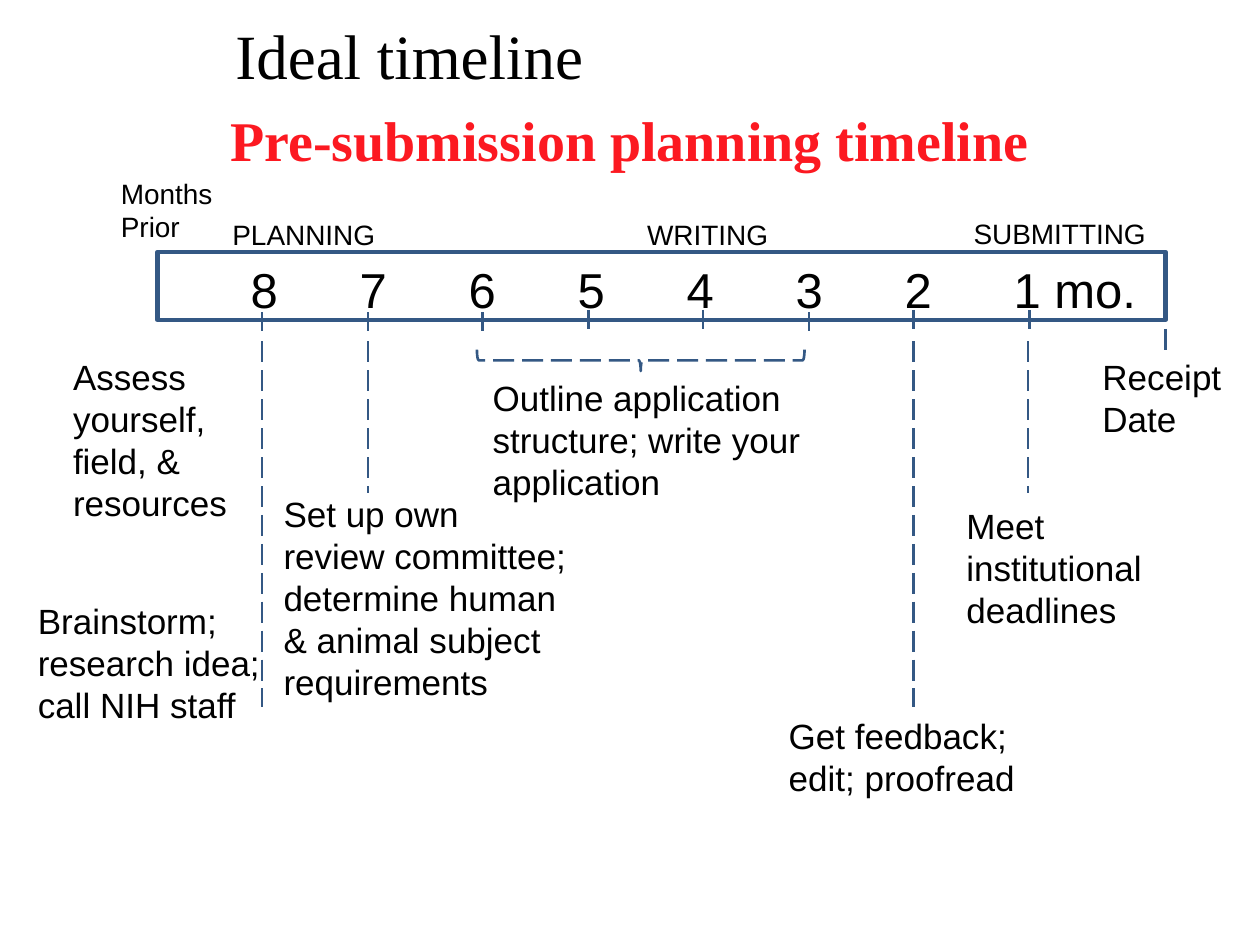
from pptx import Presentation
from pptx.dml.color import RGBColor
from pptx.enum.dml import MSO_LINE
from pptx.enum.shapes import MSO_CONNECTOR, MSO_SHAPE
from pptx.enum.text import MSO_ANCHOR, MSO_AUTO_SIZE, PP_ALIGN
from pptx.oxml.ns import qn
from pptx.util import Inches, Pt
from lxml import etree

STRAIGHT = MSO_CONNECTOR.STRAIGHT
RECTANGLE, BRACE = MSO_SHAPE.RECTANGLE, MSO_SHAPE.RIGHT_BRACE
LONG_DASH = MSO_LINE.LONG_DASH
TOP, BOTTOM = MSO_ANCHOR.TOP, MSO_ANCHOR.BOTTOM
LEFT, CENTER = PP_ALIGN.LEFT, PP_ALIGN.CENTER
NO_FIT = MSO_AUTO_SIZE.NONE

SANS, SERIF = "Arial", "Times New Roman"
BLUE, RED, BLACK = "345884", "FC1921", "000000"


def rgb(color):
    return RGBColor.from_string(color)


class TimelineSlide:
    """Holds the current slide and the style of its elements."""

    def __init__(self, prs):
        self.s = prs.slides.add_slide(prs.slide_layouts[5])

    def set_font(self, p, size, name=SANS, color=BLACK, bold=False):
        p.font.size, p.font.name, p.font.bold = Pt(size), name, bold
        p.font.color.rgb = rgb(color)

    def set_margins(self, tf, left=0, top=0, right=0, bottom=0):
        tf.margin_left, tf.margin_top = Inches(left), Inches(top)
        tf.margin_right, tf.margin_bottom = Inches(right), Inches(bottom)

    def style_line(self, shape, width=1.5, dash=None):
        shape.line.color.rgb = rgb(BLUE)
        shape.line.width = Pt(width)
        if dash:
            shape.line.dash_style = dash

    def title(self, text, box):
        sp = self.s.shapes.title
        sp.left, sp.top, sp.width, sp.height = map(Inches, box)
        tf = sp.text_frame
        tf.text = text
        tf.auto_size, tf.vertical_anchor = NO_FIT, TOP
        self.set_margins(tf, 0.1, 0.09, 0.1, 0.05)
        tf.paragraphs[0].alignment = CENTER
        self.set_font(tf.paragraphs[0], 32, SERIF, RED, True)

    def heading(self, text, box):
        tf = self.s.shapes.add_textbox(*map(Inches, box)).text_frame
        tf.word_wrap = False
        tf.text = text
        self.set_font(tf.paragraphs[0], 36, SERIF)

    def text(self, text, box, size=20, align=LEFT, right=0):
        tf = self.s.shapes.add_textbox(*map(Inches, box)).text_frame
        tf.word_wrap = True
        self.set_margins(tf, right=right)
        tf.text = text
        for p in tf.paragraphs:
            p.alignment = align
            self.set_font(p, size)

    def outline(self, kind, box, width=1.5, dash=None):
        sp = self.s.shapes.add_shape(kind, *map(Inches, box))
        sp.shadow.inherit = False
        sp.fill.background()
        self.style_line(sp, width, dash)
        return sp

    def month_bar(self, months, box, first, step):
        """Draw the bar with its months on evenly spaced tab stops."""
        tf = self.outline(RECTANGLE, box, 2.5).text_frame
        tf.vertical_anchor = BOTTOM
        self.set_margins(tf, bottom=0.01)
        p = tf.paragraphs[0]
        p.text = "".join("\t" + month for month in months)
        p.alignment = LEFT
        tabs = etree.SubElement(p._p.get_or_add_pPr(), qn("a:tabLst"))
        for i in range(len(months)):
            position = Inches(first + i * step)
            etree.SubElement(tabs, qn("a:tab"), pos=str(position), algn="l")
        self.set_font(p, 28)

    def vertical(self, x, top, bottom, dash=None):
        line = self.s.shapes.add_connector(
            STRAIGHT, Inches(x), Inches(top), Inches(x), Inches(bottom))
        self.style_line(line, dash=dash)
        etree.SubElement(line._element.spPr, qn("a:effectLst"))


def main():
    prs = Presentation()
    prs.slide_width, prs.slide_height = Inches(10), Inches(7.5)
    slide = TimelineSlide(prs)

    slide.heading("Ideal timeline", (1.77, 0.08, 2.99, 0.71))
    slide.title("Pre-submission planning timeline", (0, 0.75, 10, 0.9))

    slide.text("Months Prior", (0.96, 1.4, 0.83, 0.54), 16, right=0.1)
    for phase, left, top, width in (
        ("PLANNING", 1.25, 1.73, 2.42),
        ("WRITING", 3.67, 1.73, 3.99),
        ("SUBMITTING", 7.67, 1.72, 1.58),
    ):
        slide.text(phase, (left, top, width, 0.27), 16, CENTER, 0.1)

    months = ["8", "7", "6", "5", "4", "3", "2", "1 mo."]
    slide.month_bar(months, (1.25, 2, 8, 0.54), 0.74, 0.865)
    for x, top in ((2.08, 2.48), (2.92, 2.48), (3.83, 2.48), (4.67, 2.46),
                   (5.58, 2.46), (6.42, 2.48), (7.25, 2.46), (8.17, 2.46)):
        slide.vertical(x, top, top + 0.15)

    for x, top, bottom in ((2.08, 2.71, 5.61), (2.92, 2.71, 3.91),
                           (7.25, 2.71, 5.61), (8.16, 2.71, 3.91),
                           (9.25, 2.61, 2.81)):
        slide.vertical(x, top, bottom, LONG_DASH)
    brace = slide.outline(BRACE, (5, 1.56, 0.17, 2.6), dash=LONG_DASH)
    brace.rotation = 90

    for task, box in (
        ("Assess\nyourself, field, & resources", (0.58, 2.82, 1.33, 1.35)),
        ("Brainstorm; research idea; call NIH staff",
         (0.3, 4.76, 1.83, 1.01)),
        ("Set up own review committee; determine human & animal subject "
         "requirements", (2.25, 3.91, 2.25, 1.68)),
        ("Outline application structure; write your application",
         (3.91, 2.99, 2.54, 1.01)),
        ("Get feedback; edit; proofread", (6.26, 5.67, 1.98, 0.67)),
        ("Meet institutional deadlines", (7.67, 4, 1.46, 1.01)),
        ("Receipt\nDate", (8.75, 2.82, 1, 0.67)),
    ):
        slide.text(task, box)

    prs.save("out.pptx")


if __name__ == "__main__":
    main()
